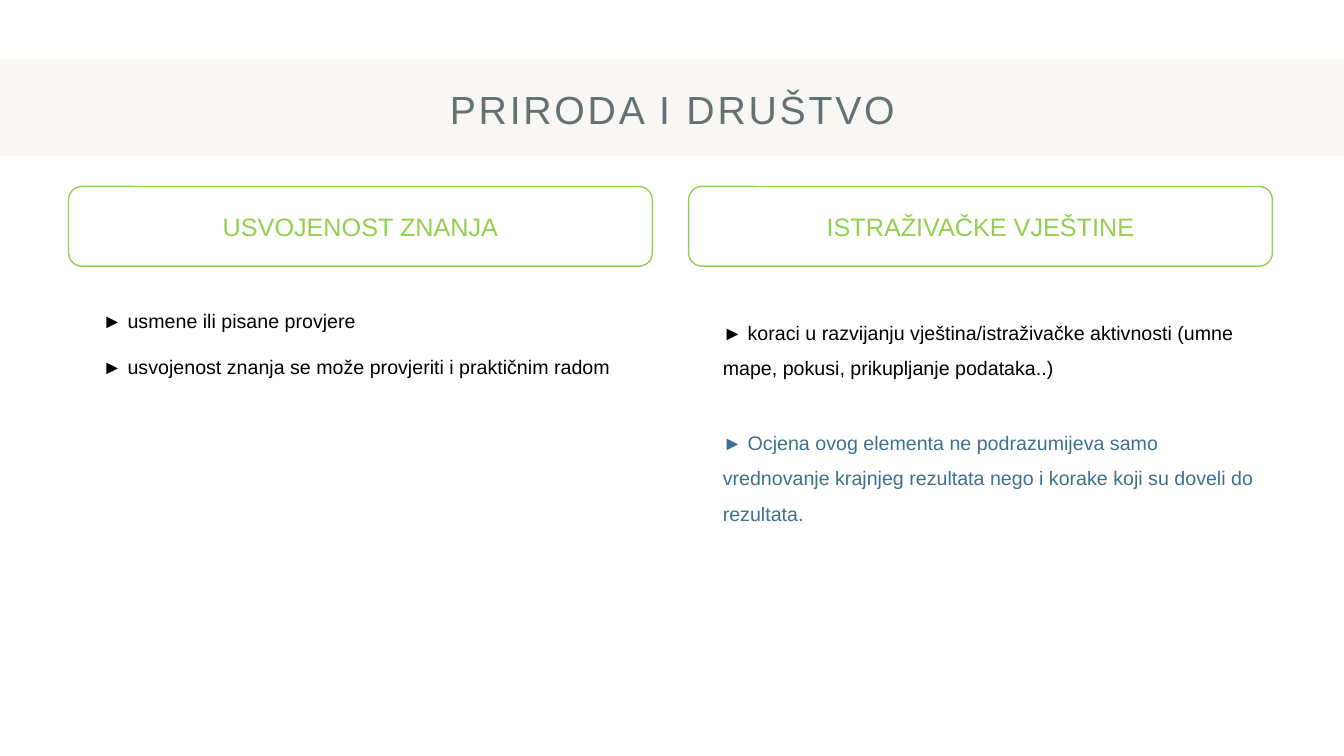
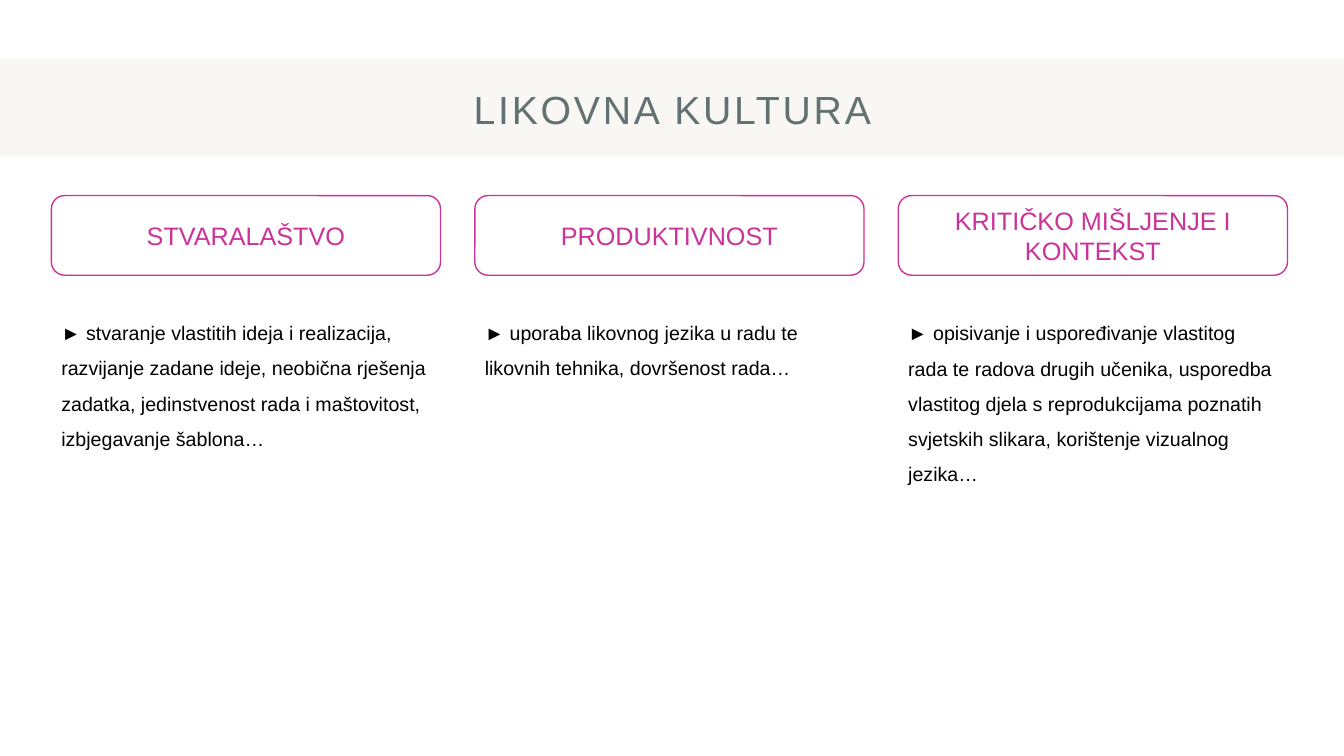
import pptx
import pptx.dml.color
import pptx.enum.shapes
import pptx.enum.text
import pptx.util
from pptx.util import Inches

FONT = "Arial"
WHITE, BAND, TITLE = "FFFFFF", "F9F7F4", "627272"
BLACK, BLUE, GREEN, PINK = "000000", "3E7090", "92D050", "CC3399"
CENTER = pptx.enum.text.PP_ALIGN.CENTER
MIDDLE = pptx.enum.text.MSO_ANCHOR.MIDDLE
SHAPES = pptx.enum.shapes.MSO_SHAPE


def color(hex_value):
    return pptx.dml.color.RGBColor.from_string(hex_value)


def write(shape, text, size, hex_value, alignment=None, anchor=None, spacing=None):
    frame = shape.text_frame
    frame.word_wrap = True
    frame.vertical_anchor = anchor
    paragraph = frame.paragraphs[0]
    paragraph.text = text
    paragraph.alignment = alignment
    paragraph.line_spacing = spacing
    paragraph.font.name = FONT
    paragraph.font.size = pptx.util.Pt(size)
    paragraph.font.color.rgb = color(hex_value)
    return paragraph


# Content: each column has a heading and notes (top, height, spacing, colour, text)
pages = [
    {
        "title": "PRIRODA I DRUŠTVO", "accent": GREEN,
        "left": 0.68, "top": 1.85, "step": 6.15, "width": 5.79,
        "note_indent": 0.24, "note_width": 5.55,
        "columns": [
            ("USVOJENOST ZNANJA", [
                (3.02, 0.34, None, BLACK, "► usmene ili pisane provjere"),
                (3.47, 0.34, None, BLACK,
                 "► usvojenost znanja se može provjeriti i praktičnim radom"),
            ]),
            ("ISTRAŽIVAČKE VJEŠTINE", [
                (3.02, 0.76, 1.5, BLACK,
                 "► koraci u razvijanju vještina/istraživačke aktivnosti "
                 "(umne mape, pokusi, prikupljanje podataka..)"),
                (4.11, 1.12, 1.5, BLUE,
                 "► Ocjena ovog elementa ne podrazumijeva samo vrednovanje krajnjeg "
                 "rezultata nego i korake koji su doveli do rezultata."),
            ]),
        ],
    },
    {
        "title": "LIKOVNA KULTURA", "accent": PINK,
        "left": 0.51, "top": 1.94, "step": 4.2, "width": 3.86,
        "note_indent": 0, "note_width": 3.83,
        "columns": [
            ("STVARALAŠTVO", [
                (3.02, 1.47, 1.5, BLACK,
                 "► stvaranje vlastitih ideja i realizacija, razvijanje zadane ideje, "
                 "neobična rješenja zadatka, jedinstvenost rada i maštovitost, "
                 "izbjegavanje šablona…"),
            ]),
            ("PRODUKTIVNOST", [
                (3.02, 0.76, 1.5, BLACK,
                 "► uporaba likovnog jezika u radu te likovnih tehnika, "
                 "dovršenost rada…"),
            ]),
            ("KRITIČKO MIŠLJENJE I KONTEKST", [
                (3.02, 1.82, 1.5, BLACK,
                 "► opisivanje i uspoređivanje vlastitog rada te radova drugih "
                 "učenika, usporedba vlastitog djela s reprodukcijama poznatih "
                 "svjetskih slikara, korištenje vizualnog jezika…"),
            ]),
        ],
    },
]

presentation = pptx.Presentation()
presentation.slide_width = Inches(13.33)
presentation.slide_height = Inches(7.5)

# Shared background
background = presentation.slide_master.background.fill
background.solid()
background.fore_color.rgb = color(WHITE)

for page in pages:
    slide = presentation.slides.add_slide(presentation.slide_layouts[6])

    # Title band
    band = slide.shapes.add_shape(
        SHAPES.RECTANGLE, 0, Inches(0.58), presentation.slide_width, Inches(0.97))
    band.shadow.inherit = False
    band.fill.solid()
    band.fill.fore_color.rgb = color(BAND)
    band.line.fill.background()

    # Title with letter spacing of 2 points
    title = slide.shapes.add_textbox(Inches(0.92), Inches(0.68), Inches(11.5), Inches(0.79))
    paragraph = write(title, page["title"], 28, TITLE, CENTER, MIDDLE)
    paragraph.runs[0].font._element.set("spc", "200")

    for index, (heading, notes) in enumerate(page["columns"]):
        left = page["left"] + index * page["step"]

        # Column heading
        box = slide.shapes.add_shape(
            SHAPES.ROUNDED_RECTANGLE, Inches(left), Inches(page["top"]),
            Inches(page["width"]), Inches(0.79))
        box.shadow.inherit = False
        box.fill.background()
        box.line.color.rgb = color(page["accent"])
        box.line.width = pptx.util.Pt(1)
        write(box, heading, 18, page["accent"], CENTER, MIDDLE)

        # Notes under the heading
        for top, height, spacing, hex_value, text in notes:
            note = slide.shapes.add_textbox(
                Inches(left + page["note_indent"]), Inches(top),
                Inches(page["note_width"]), Inches(height))
            write(note, text, 14, hex_value, spacing=spacing)

presentation.save("out.pptx")
